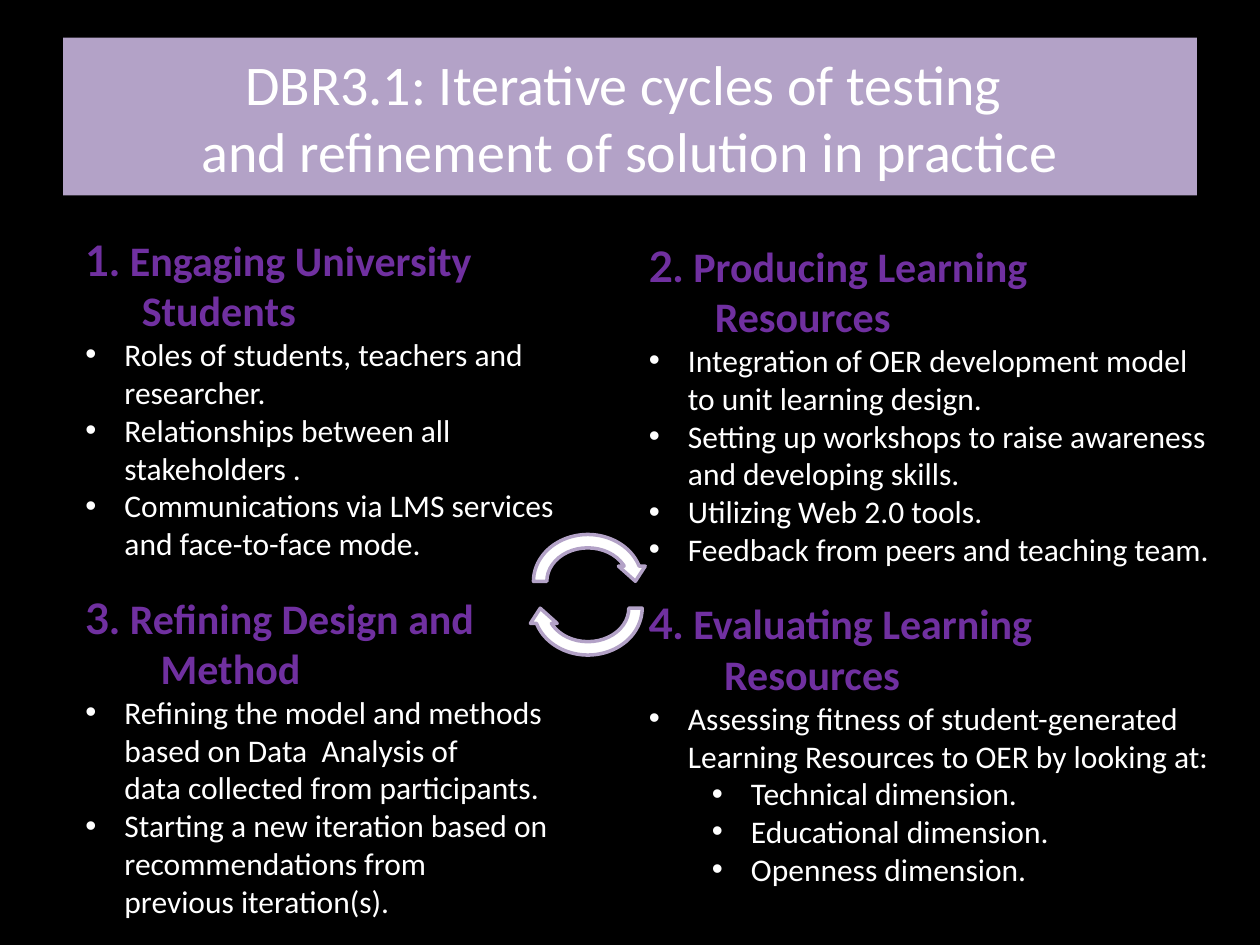
from lxml.etree import SubElement
from pptx import Presentation
from pptx.dml.color import RGBColor
from pptx.enum.shapes import MSO_SHAPE
from pptx.enum.text import MSO_ANCHOR, MSO_AUTO_SIZE, PP_ALIGN
from pptx.oxml.ns import qn
from pptx.util import Cm, Pt

# Content: \v is a line break inside a paragraph
TITLE = "DBR3.1: Iterative cycles of testing \vand refinement of solution in practice"

# number, heading, indent of its second line, (column, row), width, height, bullets (level, text)
PHASES = [
    ("1. ", "Engaging University\vStudents", 1.14, (0, 0), 11.02, 6.93, [
        (0, "Roles of students, teachers and researcher."),
        (0, "Relationships between all stakeholders ."),
        (0, "Communications via LMS services and face-to-face mode."),
    ]),
    ("2. ", "Producing Learning\vResources", 1.33, (1, 0), 11.84, 6.93, [
        (0, "Integration of OER development model to unit learning design."),
        (0, "Setting up workshops to raise awareness and developing skills."),
        (0, "Utilizing Web 2.0 tools."),
        (0, "Feedback from peers and teaching team."),
    ]),
    ("3. ", "Refining Design and\vMethod", 1.52, (0, 1), 10.44, 6.93, [
        (0, "Refining the model and methods based on Data  Analysis of \vdata collected from participants."),
        (0, "Starting a new iteration based on recommendations from \vprevious iteration(s)."),
    ]),
    ("4. ", "Evaluating Learning\vResources", 1.52, (1, 1), 12.57, 6.15, [
        (0, "Assessing fitness of student-generated Learning Resources to OER by looking at:"),
        (1, "Technical dimension."),
        (1, "Educational dimension."),
        (1, "Openness dimension."),
    ]),
]
CYCLE_ARROWS = [(10.64, 0), (11.18, 180)]  # top, rotation

BLACK, WHITE, LILAC, PURPLE = "000000", "FFFFFF", "B3A2C7", "7030A0"
COLUMN_LEFT, ROW_TOP = (1.47, 12.83), (4.6, 11.81)
COLUMN_DROP = 0.12  # the right column sits slightly lower
HANG, LEVEL_STEP = 0.79, 1.27


def paint(color_format, color):
    color_format.rgb = RGBColor.from_string(color)


def fill(target, color):
    target.fill.solid()
    paint(target.fill.fore_color, color)


def style(paragraph, size, color, bold=False):
    for run in paragraph.runs:
        run.font.name = "Calibri"
        run.font.size = Pt(size)
        run.font.bold = bold
        paint(run.font.color, color)


def hang(paragraph, left, first, bullet=False):
    properties = paragraph._p.get_or_add_pPr()
    properties.set("marL", str(Cm(left)))
    properties.set("indent", str(Cm(first)))
    if bullet:
        SubElement(properties, qn("a:buFont")).set("typeface", "Arial")
        SubElement(properties, qn("a:buChar")).set("char", "•")


def add_phase(slide, number, heading, indent, cell, width, height, bullets):
    column, row = cell
    top = ROW_TOP[row] + column * COLUMN_DROP
    box = slide.shapes.add_textbox(Cm(COLUMN_LEFT[column]), Cm(top), Cm(width), Cm(height))
    frame = box.text_frame
    frame.word_wrap = True

    # Heading: the hanging indent sets its second line in
    head = frame.paragraphs[0]
    head.text = number + heading
    first_run = head.runs[0]
    first_line = first_run.text[len(number):]
    first_run.text = number
    rest = head.add_run()
    rest.text = first_line
    first_run._r.addnext(rest._r)
    style(head, 24, PURPLE, bold=True)
    first_run.font.name = "Lato"
    hang(head, indent, -indent)

    for level, wording in bullets:
        bullet = frame.add_paragraph()
        bullet.text = wording
        bullet.level = level
        style(bullet, 18, WHITE)
        hang(bullet, HANG + level * LEVEL_STEP, -HANG, bullet=True)


def main():
    deck = Presentation()
    deck.slide_width, deck.slide_height = Cm(25.4), Cm(19.05)
    slide = deck.slides.add_slide(deck.slide_layouts[5])
    fill(slide.background, BLACK)

    # Title band
    title = slide.shapes.title
    title.left, title.top, title.width, title.height = Cm(1.27), Cm(0.76), Cm(22.86), Cm(3.18)
    fill(title, LILAC)
    frame = title.text_frame
    frame.text = TITLE
    frame.auto_size = MSO_AUTO_SIZE.NONE
    frame.vertical_anchor = MSO_ANCHOR.MIDDLE
    frame.paragraphs[0].alignment = PP_ALIGN.CENTER
    style(frame.paragraphs[0], 32, WHITE)

    # Four phases
    for phase in PHASES:
        add_phase(slide, *phase)

    # Cycle in the middle
    for top, rotation in CYCLE_ARROWS:
        arrow = slide.shapes.add_shape(
            MSO_SHAPE.CIRCULAR_ARROW, Cm(10.62), Cm(top), Cm(2.46), Cm(2.16))
        arrow.rotation = rotation
        arrow.shadow.inherit = False
        fill(arrow, WHITE)
        paint(arrow.line.color, LILAC)
        arrow.line.width = Pt(2)

    deck.save("out.pptx")


if __name__ == "__main__":
    main()
